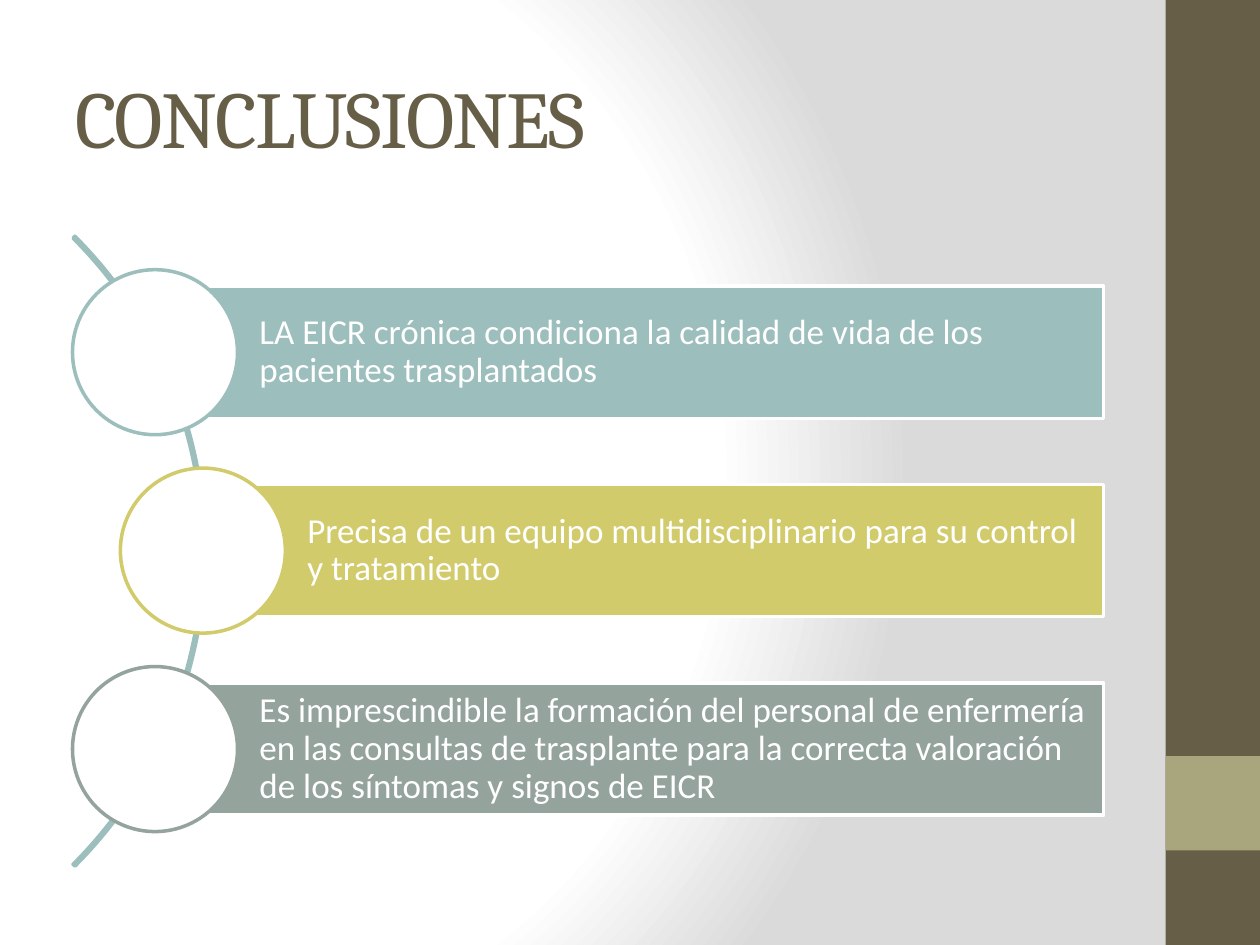
from pptx import Presentation
from pptx.dml.color import RGBColor
from pptx.enum.shapes import MSO_SHAPE
from pptx.enum.text import MSO_ANCHOR, PP_ALIGN
from pptx.oxml import parse_xml
from pptx.oxml.ns import nsdecls
from pptx.util import Inches, Pt

RECTANGLE, OVAL, ARC = MSO_SHAPE.RECTANGLE, MSO_SHAPE.OVAL, MSO_SHAPE.BLOCK_ARC
MIDDLE = MSO_ANCHOR.MIDDLE
LEFT = PP_ALIGN.LEFT

BROWN, OLIVE, WHITE = "675E47", "A9A57C", "FFFFFF"
TEAL, YELLOW, SAGE = "9CBEBD", "D2CB6C", "95A39D"

BAR_RIGHT, BAR_HEIGHT = 8.76, 1.05
CIRCLE_SIZE = 1.31
FIRST_CENTER, ROW_STEP = 2.795, 1.575

# Text, colour and horizontal centre of the circle, where the bar begins
CONCLUSIONS = [
    ("LA EICR crónica condiciona la calidad de vida de los pacientes trasplantados",
     TEAL, 1.23),
    ("Precisa de un equipo multidisciplinario para su control y tratamiento",
     YELLOW, 1.61),
    ("Es imprescindible la formación del personal de enfermería en las consultas "
     "de trasplante para la correcta valoración de los síntomas y signos de EICR",
     SAGE, 1.23),
]


def rgb(color):
    return RGBColor.from_string(color)


def set_background(slide):
    """Fill the background with a circular gradient from white to grey."""
    slide.background.fill.solid()
    properties = slide.background.fill._xPr
    stops = "".join(
        f'<a:gs pos="{position * 1000}"><a:srgbClr val="{color}"/></a:gs>'
        for position, color in [(0, WHITE), (75, WHITE), (100, "DADADA")]
    )
    gradient = parse_xml(
        f'<a:gradFill {nsdecls("a")} rotWithShape="1"><a:gsLst>{stops}</a:gsLst>'
        '<a:path path="circle"><a:fillToRect l="20000" t="50000" r="100000" b="50000"/>'
        "</a:path></a:gradFill>"
    )
    properties.replace(properties[0], gradient)


def add_figure(slide, kind, left, top, width, height, fill=None, line=None):
    figure = slide.shapes.add_shape(
        kind, Inches(left), Inches(top), Inches(width), Inches(height))
    figure.shadow.inherit = False
    if fill:
        figure.fill.solid()
        figure.fill.fore_color.rgb = rgb(fill)
    else:
        figure.fill.background()
    if line:
        figure.line.color.rgb = rgb(line)
        figure.line.width = Pt(2)
    else:
        figure.line.fill.background()
    return figure


def write(frame, text, font_name, size, color):
    frame.word_wrap = True
    frame.vertical_anchor = MIDDLE
    paragraph = frame.paragraphs[0]
    paragraph.alignment = LEFT
    run = paragraph.add_run()
    run.text = text
    run.font.name = font_name
    run.font.size = Pt(size)
    run.font.color.rgb = rgb(color)
    return paragraph


def add_title(slide, text):
    title = slide.shapes.add_textbox(
        Inches(0.5), Inches(0.3), Inches(8.33), Inches(1.25))
    paragraph = write(title.text_frame, text, "Cambria", 46, BROWN)
    paragraph.runs[0].font._element.set("spc", "-100")


def add_arc(slide):
    arc = add_figure(slide, ARC, -5.44, 0.84, 7.07, 7.07, line=TEAL)
    for index, value in enumerate((189, 27, 0.003)):
        arc.adjustments[index] = value


def add_conclusion(slide, text, color, center_x, center_y):
    bar = add_figure(slide, RECTANGLE, center_x, center_y - BAR_HEIGHT / 2,
                     BAR_RIGHT - center_x, BAR_HEIGHT, color, WHITE)
    frame = bar.text_frame
    frame.margin_left = Inches(0.83)
    frame.margin_top = frame.margin_right = frame.margin_bottom = Inches(0.06)
    write(frame, text, "Calibri", 20, WHITE).line_spacing = 0.9
    radius = CIRCLE_SIZE / 2
    add_figure(slide, OVAL, center_x - radius, center_y - radius,
               CIRCLE_SIZE, CIRCLE_SIZE, WHITE, color)


def main():
    presentation = Presentation()
    presentation.slide_width = Inches(10)
    presentation.slide_height = Inches(7.5)
    slide = presentation.slides.add_slide(presentation.slide_layouts[6])

    set_background(slide)
    add_figure(slide, RECTANGLE, 9.25, 0, 0.75, 7.5, BROWN)
    add_figure(slide, RECTANGLE, 9.25, 6, 0.75, 0.75, OLIVE)
    add_title(slide, "CONCLUSIONES")
    add_arc(slide)
    for row, (text, color, center_x) in enumerate(CONCLUSIONS):
        add_conclusion(slide, text, color, center_x, FIRST_CENTER + row * ROW_STEP)

    presentation.save("out.pptx")


if __name__ == "__main__":
    main()
